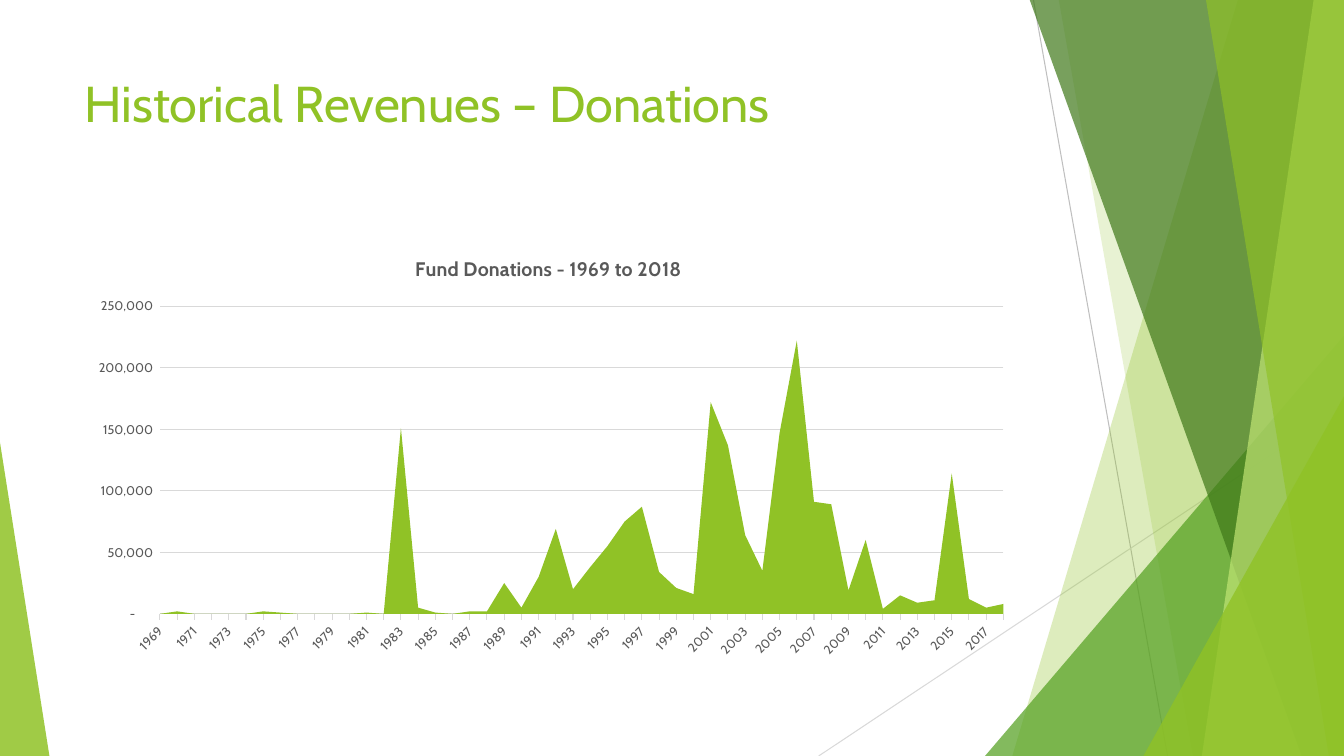
from dataclasses import dataclass

from lxml.etree import SubElement
from pptx import Presentation
from pptx.chart.data import CategoryChartData
from pptx.dml.color import RGBColor
from pptx.enum.chart import XL_CHART_TYPE as ChartType, XL_TICK_MARK as TickMark
from pptx.enum.shapes import MSO_CONNECTOR as Connector, MSO_SHAPE as Shape
from pptx.enum.text import MSO_ANCHOR as Anchor
from pptx.oxml import parse_xml
from pptx.oxml.ns import nsdecls, qn
from pptx.util import Inches, Pt


@dataclass(frozen=True)
class Theme:
    font: str = "Cabin"
    lime: str = "90C226"
    green: str = "54A021"
    forest: str = "3F7819"
    pale: str = "C0E474"
    rule: str = "BFBFBF"
    grid: str = "D9D9D9"
    label: str = "595959"
    title_size: float = 36
    chart_title_size: float = 14
    label_size: float = 9
    hairline: float = 0.75


THEME = Theme()
WIDTH, HEIGHT, TOP = 13.33, 7.5, -0.01
FIRST_YEAR = 1969
DONATIONS = (
    0, 2000, 0, 0, 0, 0, 2000, 1000, 0, 0,
    0, 0, 1000, 0, 151000, 5000, 1000, 0, 2000, 2000,
    25000, 5000, 30000, 69000, 20000, 38000, 55000, 75000, 87000, 34000,
    21000, 16000, 172000, 137000, 64000, 35000, 147000, 222000, 91000, 89000,
    19000, 60000, 4000, 15000, 9000, 11000, 114000, 12000, 5000, 8000,
)
AMOUNT_FORMAT = r'_-* #,##0_-;\-* #,##0_-;_-* "-"??_-;_-@_'


def rgb(color):
    return RGBColor.from_string(color)


def style_font(font, size, color, bold=False):
    font.name = THEME.font
    font.size = Pt(size)
    font.bold = bold
    font.color.rgb = rgb(color)


def style_line(line, color):
    line.color.rgb = rgb(color)
    line.width = Pt(THEME.hairline)


def write(frame, text, **fmt):
    """Put one formatted run in the first paragraph of a text frame."""
    run = frame.paragraphs[0].add_run()
    run.text = text
    style_font(run.font, **fmt)


def paint(facet, color, opacity):
    """Give a facet a borderless fill with the opacity in percent."""
    facet.shadow.inherit = False
    facet.line.fill.background()
    facet.fill.solid()
    facet.fill.fore_color.rgb = rgb(color)
    tint = facet.fill._xPr.find(qn("a:solidFill"))[0]
    SubElement(tint, qn("a:alpha"), val=str(opacity * 1000))


def add_rule(slide, start, end, color):
    ends = [Inches(value) for value in (*start, *end)]
    rule = slide.shapes.add_connector(Connector.STRAIGHT, *ends)
    style_line(rule.line, color)
    SubElement(rule._element.spPr, qn("a:effectLst"))


def add_band(slide, top_left, bottom_left, color, opacity):
    """Draw a slanted band that reaches the right edge of the slide."""
    corners = [(top_left, TOP), (WIDTH, TOP), (WIDTH, HEIGHT), (bottom_left, HEIGHT)]
    points = [(Inches(x), Inches(y)) for x, y in corners]
    builder = slide.shapes.build_freeform(*points[0], scale=1.0)
    builder.add_line_segments(points[1:], close=True)
    paint(builder.convert_to_shape(), color, opacity)


def add_corner(slide, left, top, width, apex, color, opacity):
    """Draw a triangle standing on the bottom edge; apex is 0 (left) to 1 (right)."""
    corner = slide.shapes.add_shape(
        Shape.ISOSCELES_TRIANGLE,
        Inches(left), Inches(top), Inches(width), Inches(HEIGHT - top))
    corner.adjustments[0] = apex
    paint(corner, color, opacity)


def add_facets(slide):
    add_rule(slide, (10.25, 0), (11.58, HEIGHT), THEME.rule)
    add_rule(slide, (WIDTH, 4.03), (8.12, HEIGHT), THEME.grid)
    add_band(slide, 12.28, 10.04, THEME.lime, 30)
    add_band(slide, 10.5, 11.83, THEME.lime, 20)
    add_corner(slide, 9.77, 3.33, 3.56, 1, THEME.green, 72)
    add_band(slide, 10.21, 12.91, THEME.forest, 70)
    add_band(slide, 13.03, 11.92, THEME.pale, 70)
    add_band(slide, 11.96, 13.18, THEME.lime, 65)
    add_corner(slide, 11.34, 3.93, 1.99, 1, THEME.lime, 80)
    add_corner(slide, 0, 4.39, 0.49, 0, THEME.lime, 85)


def add_heading(slide, text):
    heading = slide.shapes.add_textbox(
        Inches(0.74), Inches(0.67), Inches(9.4), Inches(1.44))
    frame = heading.text_frame
    frame.word_wrap = True
    frame.vertical_anchor = Anchor.TOP
    write(frame, text, size=THEME.title_size, color=THEME.lime)


def place_plot(chart, **place):
    """Fix the inner plot area, given in fractions of the chart frame."""
    plot_area = chart._chartSpace.chart.plotArea
    for automatic in plot_area.findall(qn("c:layout")):
        plot_area.remove(automatic)
    sizes = "".join(f'<c:{key} val="{value}"/>' for key, value in place.items())
    plot_area.insert(0, parse_xml(
        f'<c:layout {nsdecls("c")}><c:manualLayout><c:layoutTarget val="inner"/>'
        f'<c:xMode val="edge"/><c:yMode val="edge"/>{sizes}'
        '</c:manualLayout></c:layout>'))


def style_year_axis(axis):
    style_font(axis.tick_labels.font, THEME.label_size, THEME.label)
    style_line(axis.format.line, THEME.grid)
    axis.major_tick_mark = TickMark.OUTSIDE
    axis.has_major_gridlines = False
    body = axis._element.find(qn("c:txPr")).find(qn("a:bodyPr"))
    body.set("rot", "-2700000")
    body.set("vert", "horz")
    skip = parse_xml(f'<c:tickLblSkip {nsdecls("c")} val="2"/>')
    axis._element.find(qn("c:noMultiLvlLbl")).addprevious(skip)


def style_amount_axis(axis):
    style_font(axis.tick_labels.font, THEME.label_size, THEME.label)
    axis.tick_labels.number_format = AMOUNT_FORMAT
    axis.tick_labels.number_format_is_linked = False
    axis.minimum_scale, axis.maximum_scale, axis.major_unit = 0, 250000, 50000
    axis.major_tick_mark = TickMark.NONE
    axis.format.line.fill.background()
    axis.has_major_gridlines = True
    style_line(axis.major_gridlines.format.line, THEME.grid)
    axis._element.find(qn("c:crossBetween")).set("val", "midCat")


def add_donations_chart(slide, title):
    history = CategoryChartData()
    history.categories = [str(FIRST_YEAR + i) for i in range(len(DONATIONS))]
    history.add_series("Donations", DONATIONS)
    chart = slide.shapes.add_chart(
        ChartType.AREA_STACKED,
        Inches(0.74), Inches(2.36), Inches(9.4), Inches(4.24), history).chart
    style_font(chart.font, THEME.label_size, THEME.label)
    chart.has_legend = False
    chart.has_title = True
    write(chart.chart_title.text_frame, title,
          size=THEME.chart_title_size, color=THEME.label, bold=True)
    chart.chart_title.include_in_layout = False
    plot = chart.plots[0]
    plot.vary_by_categories = False
    area = plot.series[0].format
    area.fill.solid()
    area.fill.fore_color.rgb = rgb(THEME.lime)
    area.line.fill.background()
    style_year_axis(chart.category_axis)
    style_amount_axis(chart.value_axis)
    place_plot(chart, x=0.09, y=0.16, w=0.89, h=0.72)


def main():
    deck = Presentation()
    deck.slide_width, deck.slide_height = Inches(WIDTH), Inches(HEIGHT)
    slide = deck.slides.add_slide(deck.slide_layouts[6])
    add_facets(slide)
    add_heading(slide, "Historical Revenues – Donations")
    add_donations_chart(slide, "Fund Donations - 1969 to 2018")
    deck.save("out.pptx")


if __name__ == "__main__":
    main()
